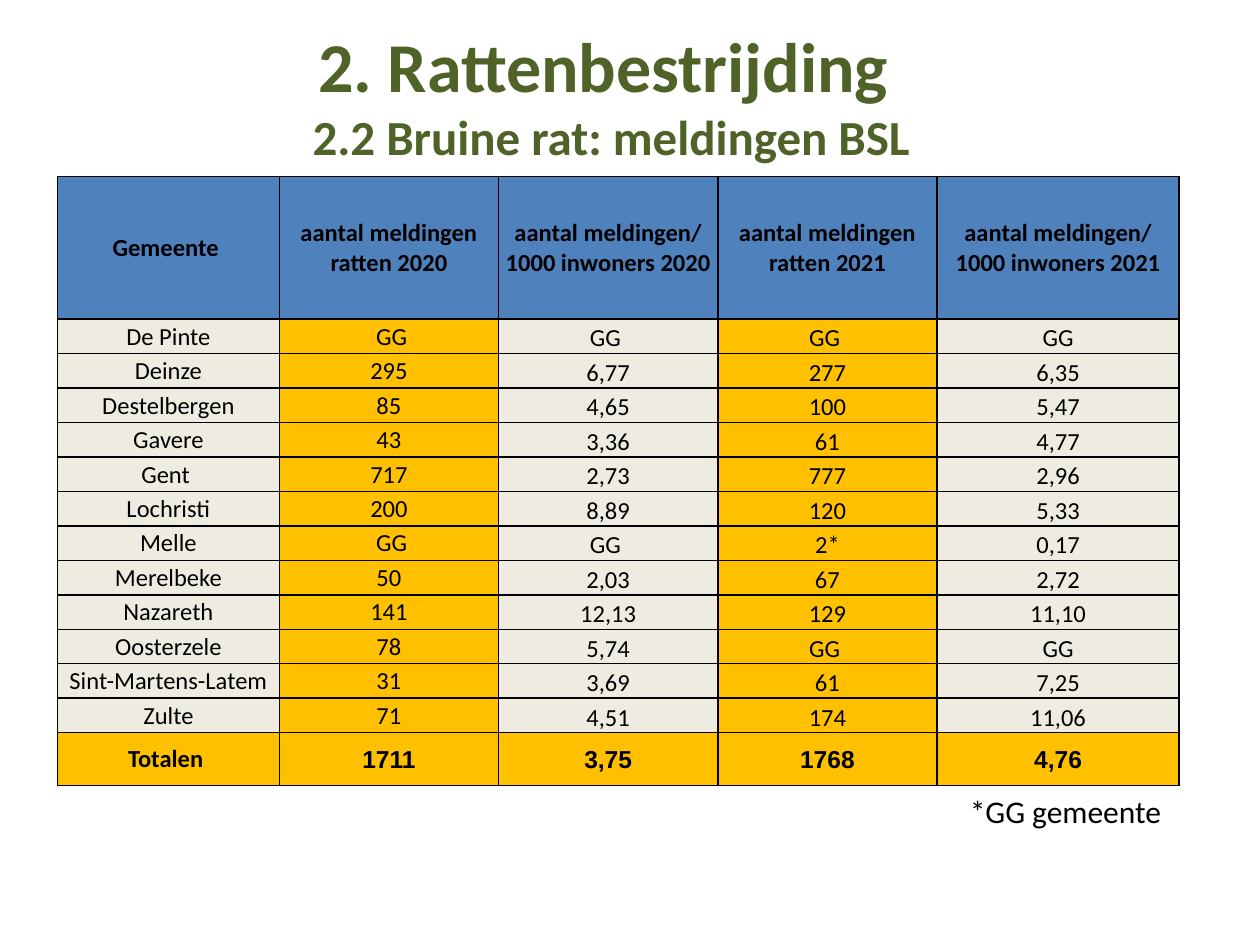
from dataclasses import dataclass

from pptx import Presentation
from pptx import util as u
from pptx.dml import color
from pptx.enum import text
from pptx.oxml import parse_xml
from pptx.oxml.ns import nsdecls

BLACK, GREEN, BLUE, CREAM, AMBER = "000000", "4F6228", "4F81BD", "EEECE1", "FFC000"
MIDDLE, BOTTOM = text.MSO_ANCHOR.MIDDLE, text.MSO_ANCHOR.BOTTOM

COLUMN_WIDTHS = [4.47, 4.42, 4.42, 4.42, 4.88]
TABLE_HEIGHT, HEADER_HEIGHT, TOTAL_HEIGHT = 12.28, 2.87, 1.06

HEADER = [
    "Gemeente ",
    "aantal meldingen ratten 2020",
    "aantal meldingen/ 1000 inwoners 2020",
    "aantal meldingen ratten 2021",
    "aantal meldingen/ 1000 inwoners 2021",
]
REPORTS = [
    ["De Pinte", " GG", "GG ", "GG ", "GG"],
    ["Deinze", "295", "6,77", "277", "6,35"],
    ["Destelbergen", "85", "4,65", "100", "5,47"],
    ["Gavere", "43", "3,36", "61", "4,77"],
    ["Gent ", "717", "2,73", "777", "2,96"],
    ["Lochristi", "200", "8,89", "120", "5,33"],
    ["Melle", " GG", "GG ", "2*", "0,17"],
    ["Merelbeke", "50", "2,03", "67", "2,72"],
    ["Nazareth", "141", "12,13", "129", "11,10"],
    ["Oosterzele", "78", "5,74", "GG ", "GG"],
    ["Sint-Martens-Latem", "31", "3,69", "61", "7,25"],
    ["Zulte", "71", "4,51", "174", "11,06"],
]
TOTALS = ["Totalen ", "1711", "3,75", "1768", "4,76"]


@dataclass
class CellStyle:
    fill: str
    anchor: text.MSO_ANCHOR = MIDDLE
    bold: bool = False
    font: str = "Calibri"


HEADER_STYLES = [CellStyle(BLUE, bold=True)] * 5
REPORT_STYLES = [
    CellStyle(CREAM),
    CellStyle(AMBER),
    CellStyle(CREAM, BOTTOM),
    CellStyle(AMBER, BOTTOM),
    CellStyle(CREAM, BOTTOM),
]
TOTAL_STYLES = [CellStyle(AMBER, bold=True)] + [CellStyle(AMBER, bold=True, font="Arial")] * 4


def rgb(value: str) -> color.RGBColor:
    return color.RGBColor.from_string(value)


def write(para, words: str, *, size: float, tint: str = BLACK, bold: bool = False,
          font: str = "Calibri", align=text.PP_ALIGN.CENTER) -> None:
    para.alignment = align
    span = para.add_run()
    span.text = words
    span.font.name = font
    span.font.size = u.Pt(size)
    span.font.bold = bold
    span.font.color.rgb = rgb(tint)


def add_borders(cell) -> None:
    """Put a thin black line on all four sides; lines must precede the fill."""
    properties = cell._tc.get_or_add_tcPr()
    for position, side in enumerate(("lnL", "lnR", "lnT", "lnB")):
        line = parse_xml(
            f'<a:{side} {nsdecls("a")} w="{u.Pt(1)}"><a:solidFill>'
            f'<a:srgbClr val="{BLACK}"/></a:solidFill></a:{side}>')
        properties.insert(position, line)


def fill_row(table, row: int, values: list[str], styles: list[CellStyle]) -> None:
    for column, (value, style) in enumerate(zip(values, styles)):
        cell = table.cell(row, column)
        cell.fill.solid()
        cell.fill.fore_color.rgb = rgb(style.fill)
        cell.vertical_anchor = style.anchor
        cell.margin_left = cell.margin_right = cell.margin_top = u.Cm(0.02)
        cell.margin_bottom = 0
        add_borders(cell)
        write(cell.text_frame.paragraphs[0], value, size=14,
              bold=style.bold, font=style.font)


def add_title(page) -> None:
    title = page.shapes.title
    title.left, title.top = u.Cm(0.89), u.Cm(0.33)
    title.width, title.height = u.Cm(22.86), u.Cm(13.77)
    frame = title.text_frame
    frame.auto_size = text.MSO_AUTO_SIZE.NONE
    frame.vertical_anchor = text.MSO_ANCHOR.TOP
    write(frame.paragraphs[0], "2. Rattenbestrijding ", size=40, tint=GREEN, bold=True)
    write(frame.add_paragraph(), "2.2 Bruine rat: meldingen BSL", size=28, tint=GREEN, bold=True)


def add_report_table(page) -> None:
    rows = [(HEADER, HEADER_STYLES), *((report, REPORT_STYLES) for report in REPORTS),
            (TOTALS, TOTAL_STYLES)]
    table = page.shapes.add_table(
        len(rows), len(COLUMN_WIDTHS), u.Cm(1.16), u.Cm(3.56),
        u.Cm(sum(COLUMN_WIDTHS)), u.Cm(TABLE_HEIGHT)).table
    table.first_row = table.horz_banding = False
    for column, width in zip(table.columns, COLUMN_WIDTHS):
        column.width = u.Cm(width)
    report_height = (TABLE_HEIGHT - HEADER_HEIGHT - TOTAL_HEIGHT) / len(REPORTS)
    heights = [HEADER_HEIGHT, *[report_height] * len(REPORTS), TOTAL_HEIGHT]
    for index, ((values, styles), height) in enumerate(zip(rows, heights)):
        table.rows[index].height = u.Cm(height)
        fill_row(table, index, values, styles)


def add_footnote(page) -> None:
    box = page.shapes.add_textbox(u.Cm(19.3), u.Cm(15.85), u.Cm(5.8), u.Cm(1.02))
    box.text_frame.word_wrap = True
    box.text_frame.auto_size = text.MSO_AUTO_SIZE.SHAPE_TO_FIT_TEXT
    write(box.text_frame.paragraphs[0], "*GG gemeente", size=18, align=text.PP_ALIGN.LEFT)


def main() -> None:
    deck = Presentation()
    deck.slide_width, deck.slide_height = u.Cm(25.4), u.Cm(19.05)
    page = deck.slides.add_slide(deck.slide_layouts.get_by_name("Title Only"))
    add_title(page)
    add_report_table(page)
    add_footnote(page)
    deck.save("out.pptx")


if __name__ == "__main__":
    main()
